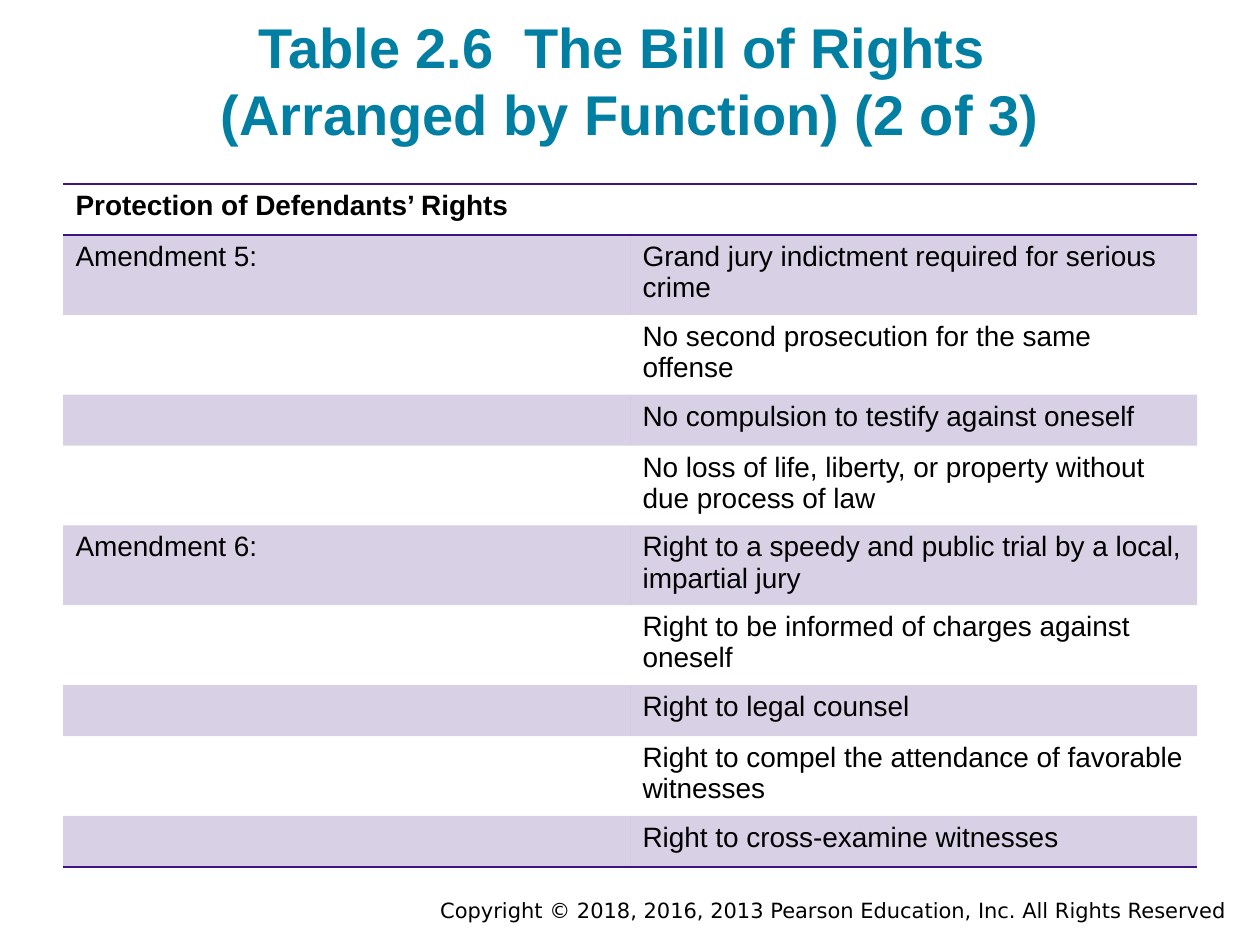
from dataclasses import dataclass

from lxml.etree import SubElement
from pptx import Presentation
from pptx.dml.color import RGBColor
from pptx.enum.text import MSO_ANCHOR as Anchor, PP_ALIGN as Align
from pptx.oxml import parse_xml
from pptx.oxml.ns import nsdecls, qn
from pptx.util import Emu, Pt

PX_PER_INCH = 126
NO_STYLE = "{2D5ABB26-0587-4C30-8999-92F81FD0307C}"


@dataclass(frozen=True)
class Theme:
    """Colours, fonts and type sizes of the slide."""
    title: str = "007FA3"
    text: str = "000000"
    accent: str = "3C1581"
    band_alpha: int = 20
    font: str = "Arial"
    footer_font: str = "DejaVu Sans"
    title_size: int = 32
    body_size: int = 16
    footer_size: int = 12


@dataclass(frozen=True)
class Box:
    """A rectangle in px."""
    left: int
    top: int
    width: int
    height: int

    def emu(self) -> tuple:
        """Return the rectangle in EMU."""
        return tuple(map(px, (self.left, self.top, self.width, self.height)))


@dataclass(frozen=True)
class Row:
    """One table row."""
    label: str
    right: str = ""
    bold: bool = False


THEME = Theme()
TITLE_BOX = Box(63, 25, 1134, 135)
TABLE_BOX = Box(63, 184, 1134, 510)
FOOTER_BOX = Box(252, 892, 987, 38)
ROWS = (
    Row("Protection of Defendants’ Rights", bold=True),
    Row("Amendment 5:", "Grand jury indictment required for serious crime"),
    Row("", "No second prosecution for the same offense"),
    Row("", "No compulsion to testify against oneself"),
    Row("", "No loss of life, liberty, or property without due process of law"),
    Row("Amendment 6:", "Right to a speedy and public trial by a local, impartial jury"),
    Row("", "Right to be informed of charges against oneself"),
    Row("", "Right to legal counsel"),
    Row("", "Right to compel the attendance of favorable witnesses"),
    Row("", "Right to cross-examine witnesses"),
)


def px(length: int) -> Emu:
    """Turn px into EMU."""
    return Emu(round(length * 914400 / PX_PER_INCH))


def write(frame, text: str, *, size: int = THEME.body_size, font: str = THEME.font,
          color: str = THEME.text, bold: bool = False, align=Align.LEFT) -> None:
    """Write one formatted paragraph into a text frame."""
    paragraph = frame.paragraphs[0]
    paragraph.text = text
    paragraph.alignment = align
    paragraph.font.size = Pt(size)
    paragraph.font.name = font
    paragraph.font.bold = bold
    paragraph.font.color.rgb = RGBColor.from_string(color)


def add_text(slide, box: Box, text: str, *, anchor=Anchor.TOP, inset_y: int = 6, **style) -> None:
    """Add a wrapping text box."""
    frame = slide.shapes.add_textbox(*box.emu()).text_frame
    frame.word_wrap = True
    frame.vertical_anchor = anchor
    frame.margin_top = frame.margin_bottom = px(inset_y)
    write(frame, text, **style)


def fill_band(cell) -> None:
    """Fill a cell with the translucent accent colour."""
    cell.fill.solid()
    cell.fill.fore_color.rgb = RGBColor.from_string(THEME.accent)
    color = cell._tc.tcPr.find(f".//{qn('a:srgbClr')}")
    SubElement(color, qn("a:alpha"), val=str(THEME.band_alpha * 1000))


def add_borders(cell, sides: str) -> None:
    """Draw accent rules on the given sides, T before B."""
    for index, side in enumerate(sides):
        cell._tc.tcPr.insert(index, parse_xml(
            f'<a:ln{side} {nsdecls("a")} w="{Pt(1)}"><a:solidFill>'
            f'<a:srgbClr val="{THEME.accent}"/></a:solidFill></a:ln{side}>'))


def add_rights_table(slide, box: Box, rows: tuple[Row, ...]) -> None:
    """Add the banded table with rules around its header and at its foot."""
    table = slide.shapes.add_table(len(rows), 2, *box.emu()).table
    table.horz_banding = False
    table._tbl.tblPr.find(qn("a:tableStyleId")).text = NO_STYLE
    borders = {0: "TB", len(rows) - 1: "B"}
    for index, row in enumerate(rows):
        for column, text in enumerate((row.label, row.right)):
            cell = table.cell(index, column)
            if text:
                write(cell.text_frame, text, bold=row.bold)
            if index % 2:
                fill_band(cell)
            else:
                cell.fill.background()
            add_borders(cell, borders.get(index, ""))


def main() -> None:
    """Build and save the slide."""
    presentation = Presentation()
    presentation.slide_width = px(1260)
    presentation.slide_height = px(945)
    slide = presentation.slides.add_slide(presentation.slide_layouts[6])
    add_text(slide, FOOTER_BOX,
             "Copyright © 2018, 2016, 2013 Pearson Education, Inc. All Rights Reserved",
             size=THEME.footer_size, font=THEME.footer_font, align=Align.RIGHT)
    add_text(slide, TITLE_BOX, "Table 2.6  The Bill of Rights \v(Arranged by Function) (2 of 3)",
             anchor=Anchor.BOTTOM, inset_y=13, size=THEME.title_size,
             color=THEME.title, bold=True, align=Align.CENTER)
    add_rights_table(slide, TABLE_BOX, ROWS)
    presentation.save("out.pptx")


if __name__ == "__main__":
    main()
